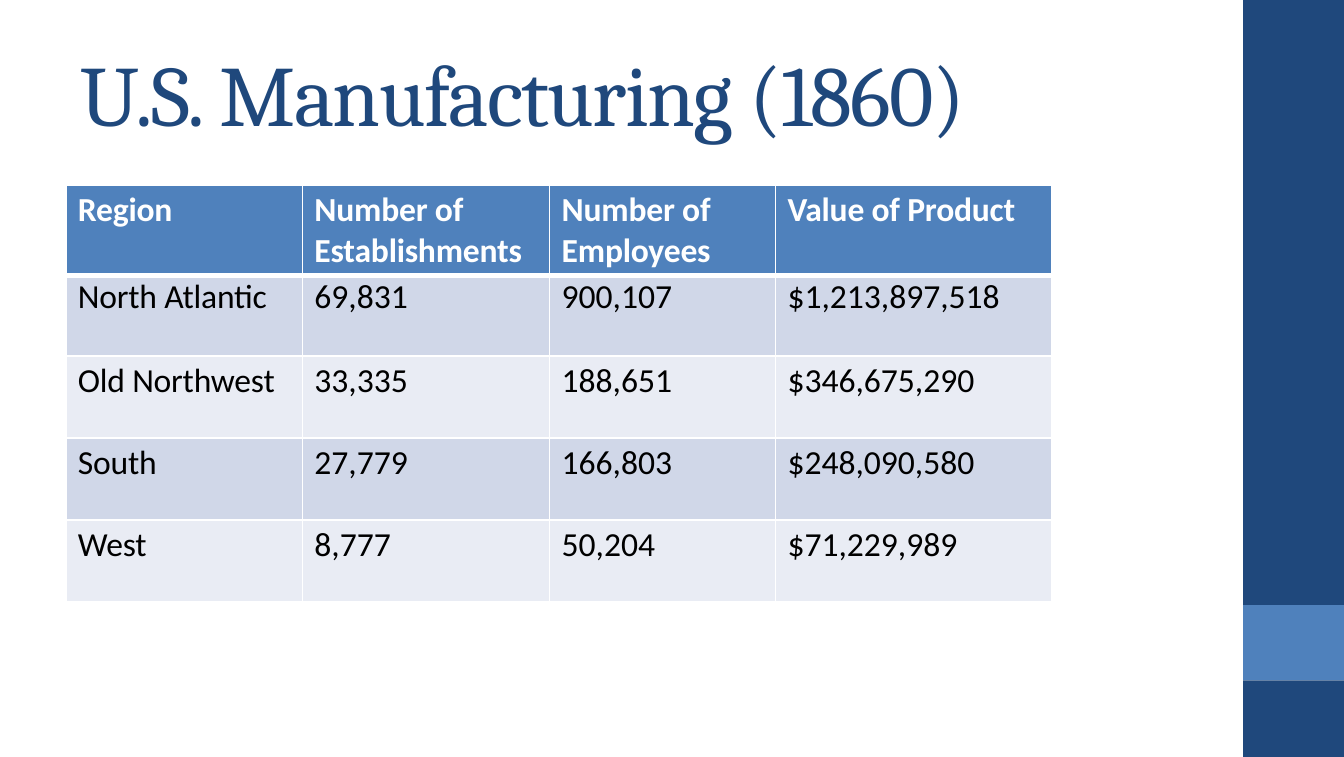
from dataclasses import dataclass

from lxml.etree import SubElement
from pptx import Presentation
from pptx.dml.color import RGBColor
from pptx.enum.shapes import MSO_SHAPE
from pptx.enum.text import MSO_ANCHOR, PP_ALIGN
from pptx.oxml.ns import qn
from pptx.util import Inches, Pt


@dataclass(frozen=True)
class Theme:
    """Colours, fonts and type sizes of the slide."""
    navy: str = "1F487C"
    blue: str = "4F81BC"
    band: str = "D0D7E8"
    pale: str = "E9ECF4"
    white: str = "FFFFFF"
    black: str = "000000"
    serif: str = "Cambria"
    sans: str = "Calibri"
    head: int = 46
    text: int = 18


THEME = Theme()
TITLE = [("U.S. ", -110), ("Manufacturing ", -90), ("(1860)", -80)]
BLOCKS = [(0, 4.5, THEME.navy), (4.5, 0.56, THEME.blue), (5.06, 0.57, THEME.navy)]
COLS = [1.76, 1.84, 1.68, 2.06]
ROWS = [0.67, 0.6, 0.61, 0.61, 0.61]
DATA = [
    ["Region", "Number of\nEstablishments", "Number of\nEmployees", "Value of Product"],
    ["North Atlantic", "69,831", "900,107", "$1,213,897,518"],
    ["Old Northwest", "33,335", "188,651", "$346,675,290"],
    ["South", "27,779", "166,803", "$248,090,580"],
    ["West", "8,777", "50,204", "$71,229,989"],
]


def style(item, form):
    """Set each attribute named in the format dict."""
    for name, value in form.items():
        setattr(item, name, value)


def paint(fill, color):
    """Give a fill one solid colour."""
    fill.solid()
    fill.fore_color.rgb = RGBColor.from_string(color)


def add_run(para, text, form, color, track=0):
    """Add a run with its font, colour and letter spacing."""
    run = para.add_run()
    run.text = text
    style(run.font, form)
    run.font.color.rgb = RGBColor.from_string(color)
    if track:
        run.font._rPr.set("spc", str(track))


def add_block(slide, top, height, color):
    """Add one block of the right-hand strip."""
    block = slide.shapes.add_shape(
        MSO_SHAPE.RECTANGLE, Inches(9.25), Inches(top), Inches(0.75), Inches(height))
    block.shadow.inherit = False
    paint(block.fill, color)
    block.line.fill.background()


def add_title(slide):
    """Fill and place the title."""
    title = slide.shapes.title
    style(title, {"left": Inches(0.59), "top": Inches(0.28),
                  "width": Inches(6.86), "height": Inches(0.8)})
    frame = title.text_frame
    style(frame, {"margin_left": Inches(0.01), "margin_top": Inches(0.02),
                  "margin_right": 0, "margin_bottom": 0,
                  "word_wrap": True, "vertical_anchor": MSO_ANCHOR.TOP})
    para = frame.paragraphs[0]
    para.alignment = PP_ALIGN.LEFT
    form = {"name": THEME.serif, "size": Pt(THEME.head)}
    for text, track in TITLE:
        add_run(para, text, form, THEME.navy, track)


def add_edge(cell, side, width):
    """Draw one white border of a cell."""
    edge = SubElement(cell._tc.get_or_add_tcPr(), qn(f"a:ln{side}"), w=str(Pt(width)))
    fill = SubElement(edge, qn("a:solidFill"))
    SubElement(fill, qn("a:srgbClr"), val=THEME.white)


def fill_cell(cell, text, row, col):
    """Write and format one table cell."""
    head = row == 0
    style(cell, {"margin_left": Inches(0.09), "margin_right": 0, "margin_bottom": 0,
                 "margin_top": Inches(0.01 if row == 1 else 0.03),
                 "vertical_anchor": MSO_ANCHOR.TOP})
    thick = {(0, "B"), (1, "T")}
    for side in "LRTB":
        add_edge(cell, side, 3 if (row, side) in thick else 1)
    paint(cell.fill, THEME.blue if head else THEME.band if row % 2 else THEME.pale)
    form = {"name": THEME.sans, "size": Pt(THEME.text), "bold": head}
    color = THEME.white if head else THEME.black
    track = -10 if head or col == 0 else 0
    frame = cell.text_frame
    for i, line in enumerate(text.split("\n")):
        para = frame.add_paragraph() if i else frame.paragraphs[0]
        add_run(para, line, form, color, track)


def add_grid(slide):
    """Add the table of regions."""
    grid = slide.shapes.add_table(
        len(ROWS), len(COLS), Inches(0.49), Inches(1.38),
        Inches(sum(COLS)), Inches(sum(ROWS))).table
    for col, width in zip(grid.columns, COLS):
        col.width = Inches(width)
    for r, height in enumerate(ROWS):
        grid.rows[r].height = Inches(height)
        for c, text in enumerate(DATA[r]):
            fill_cell(grid.cell(r, c), text, r, c)


def main():
    """Build and save the slide."""
    deck = Presentation()
    style(deck, {"slide_width": Inches(10), "slide_height": Inches(5.63)})
    slide = deck.slides.add_slide(deck.slide_layouts[5])
    for block in BLOCKS:
        add_block(slide, *block)
    add_title(slide)
    add_grid(slide)
    deck.save("out.pptx")


if __name__ == "__main__":
    main()
